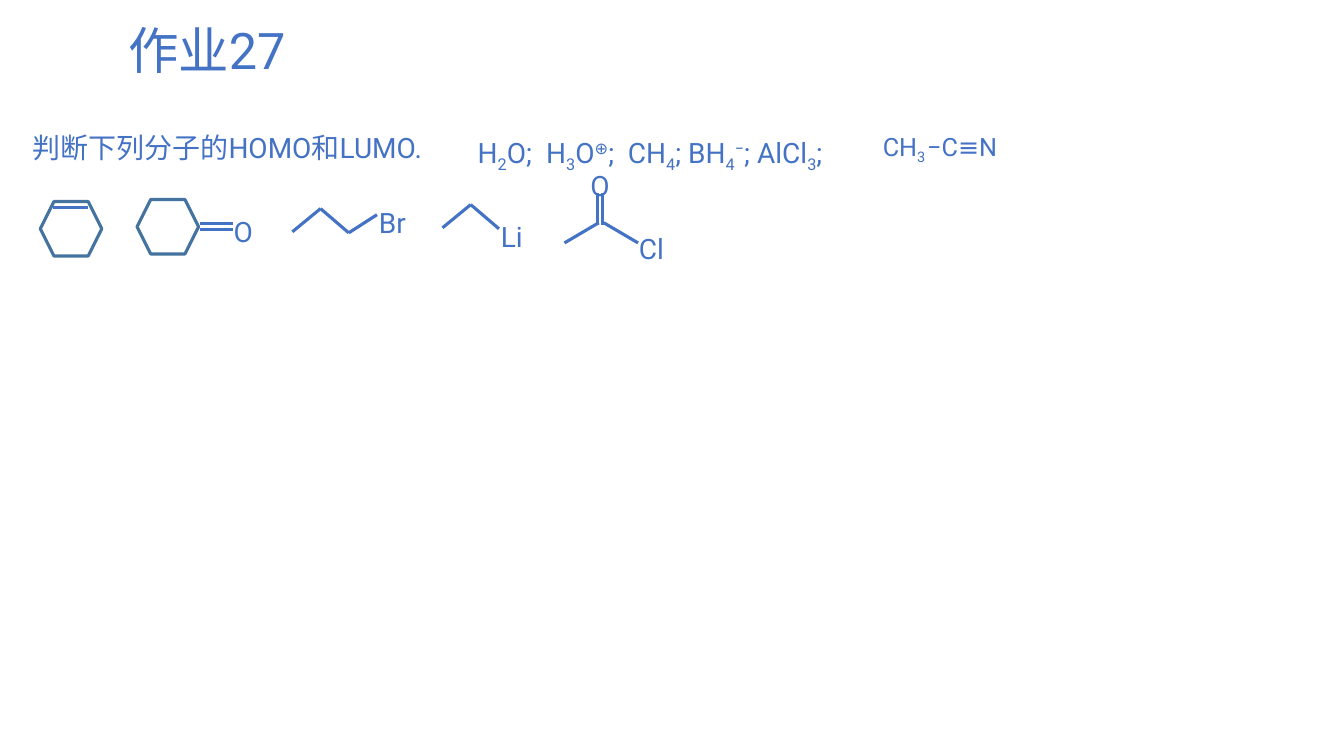
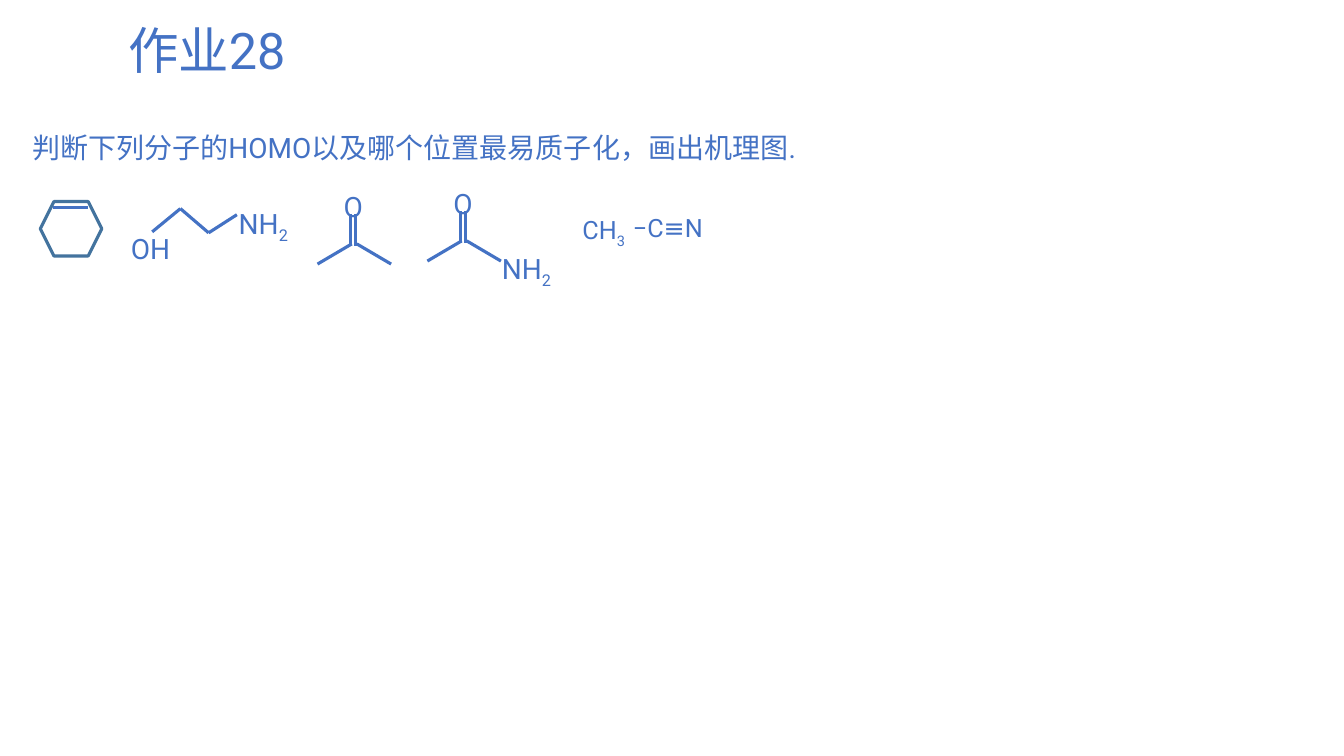
from lxml import etree
from pptx import Presentation
from pptx import util as u
from pptx.dml.color import RGBColor
from pptx.enum import shapes, text
from pptx.oxml.ns import qn

BLUE = RGBColor(0x44, 0x72, 0xC4)
TEAL = RGBColor(0x43, 0x73, 0x9E)
FONT = "Roboto"
COLS, ROWS = 133.33, 75
CELL = u.Inches(0.1)
STROKE = u.Pt(2.25)
STEP = 2.8


def grid(*cells):
    """Turn counts of grid cells into lengths."""
    return [u.Emu(round(n * CELL)) for n in cells]


def split(words):
    """Cut text into runs with baselines: _ lowers and ^ raises one symbol."""
    first, *rest = words.replace("^", "_^").split("_")
    runs = [(first, 0)]
    for part in rest:
        shift = 30000 if part[0] == "^" else -25000
        part = part.lstrip("^")
        runs += [(part[0], shift), (part[1:], 0)]
    return [run for run in runs if run[0]]


def write(frame, words, size=20, lead=1.3, tabs=()):
    """Fill a text frame with one formatted paragraph."""
    frame.word_wrap = True
    frame.auto_size = text.MSO_AUTO_SIZE.NONE
    para = frame.paragraphs[0]
    para.alignment = text.PP_ALIGN.LEFT
    para.line_spacing = lead
    if tabs:
        stops = etree.SubElement(para._p.get_or_add_pPr(), qn("a:tabLst"))
        for pos in grid(*tabs):
            etree.SubElement(stops, qn("a:tab"), pos=str(pos), algn="l")
    for part, shift in split(words):
        run = para.add_run()
        run.text = part
        run.font.name = FONT
        run.font.size = u.Pt(size)
        run.font.color.rgb = BLUE
        if shift:
            run._r.get_or_add_rPr().set("baseline", str(shift))


def label(slide, x, y, words, wide=8.4, high=5.5, **style):
    """Place text in a box."""
    box = slide.shapes.add_textbox(*grid(x, y, wide, high))
    write(box.text_frame, words, **style)


def bond(slide, *points):
    """Join successive points with lines."""
    for start, end in zip(points, points[1:]):
        line = slide.shapes.add_connector(
            shapes.MSO_CONNECTOR.STRAIGHT, *grid(*start, *end))
        line.line.color.rgb = BLUE
        line.line.width = STROKE
        etree.SubElement(line._element.spPr, qn("a:effectLst"))


def ring(slide, x, y):
    """Draw a six-membered ring."""
    hexa = slide.shapes.add_shape(
        shapes.MSO_SHAPE.HEXAGON, *grid(x, y, 6.1, 5.4))
    hexa.shadow.inherit = False
    hexa.fill.background()
    hexa.line.color.rgb = TEAL
    hexa.line.width = STROKE


def alkene(slide, x, y):
    """Draw a ring with a double bond inside."""
    ring(slide, x, y)
    bond(slide, (x + 1.3, y + 0.6), (x + 4.7, y + 0.6))


def ketone(slide, x, y):
    """Draw a ring with an oxygen at its right corner."""
    ring(slide, x, y)
    for row in (y + 2.4, y + 3):
        bond(slide, (x + 6.2, row), (x + 9.5, row))
    label(slide, x + 8.6, y, "O")


def chain(slide, x, y, drops, end, shift):
    """Draw a zigzag chain with a group at its end."""
    bond(slide, *[(x + i * STEP, y + d) for i, d in enumerate(drops)])
    label(slide, x + (len(drops) - 1) * STEP - 0.8, y + shift, end)


def acyl(slide, x, y, end=""):
    """Draw a carbonyl between a methyl and an end group."""
    for col in (x + 3.3, x + 3.8):
        bond(slide, (col, y - 1.8), (col, y - 5))
    bond(slide, (x, y), (x + 3.4, y - 2))
    bond(slide, (x + 3.9, y - 2), (x + 7.3, y))
    label(slide, x + 1.6, y - 8.9, "O")
    if end:
        label(slide, x + 6.4, y - 2.6, end)


def nitrile(slide, x, y, gap, rise=0):
    """Write the two parts of the nitrile."""
    label(slide, x, y, "CH_3", high=4, size=18, lead=1)
    label(slide, x + gap, y - rise, "−C≡N", wide=9.2, high=4, size=18, lead=1)


def page(deck, name, task, wide):
    """Add a slide with its title and task."""
    slide = deck.slides.add_slide(deck.slide_layouts[5])
    head = slide.shapes.title
    head.left, head.top, head.width, head.height = grid(11.7, 0, 107.8, 10.5)
    head.text_frame.vertical_anchor = text.MSO_ANCHOR.MIDDLE
    write(head.text_frame, name, size=36, lead=0.9)
    label(slide, 2.2, 11.8, task, wide=wide, high=5, lead=1.2)
    alkene(slide, 4, 20)
    return slide


def main():
    """Build both homework slides."""
    deck = Presentation()
    deck.slide_width, deck.slide_height = grid(COLS, ROWS)

    slide = page(deck, "作业27", "判断下列分子的HOMO和LUMO.", 45.5)
    label(slide, 46.4, 11.8, "H_2O;\tH_3O^⊕;\tCH_4; BH_4^−; AlCl_3;",
          wide=83.1, tabs=(6.8, 14.9))
    nitrile(slide, 86.6, 12.5, 4.4)
    ketone(slide, 13.6, 19.8)
    chain(slide, 29, 23, (0, -2.3, 0.1, -1.7), "Br", -4.1)
    chain(slide, 43.9, 22.6, (0, -2.3, 0.1), "Li", -2.3)
    acyl(slide, 56, 24.1, "Cl")

    slide = page(deck, "作业28",
                 "判断下列分子的HOMO以及哪个位置最易质子化，画出机理图.", 82)
    nitrile(slide, 56.8, 20.8, 5, rise=0.2)
    chain(slide, 15.1, 23, (0, -2.3, 0.1, -1.7), "NH_2", -4.1)
    label(slide, 12, 21.5, "OH")
    acyl(slide, 31.5, 26.2)
    acyl(slide, 42.4, 25.9, "NH_2")

    deck.save("out.pptx")


if __name__ == "__main__":
    main()
